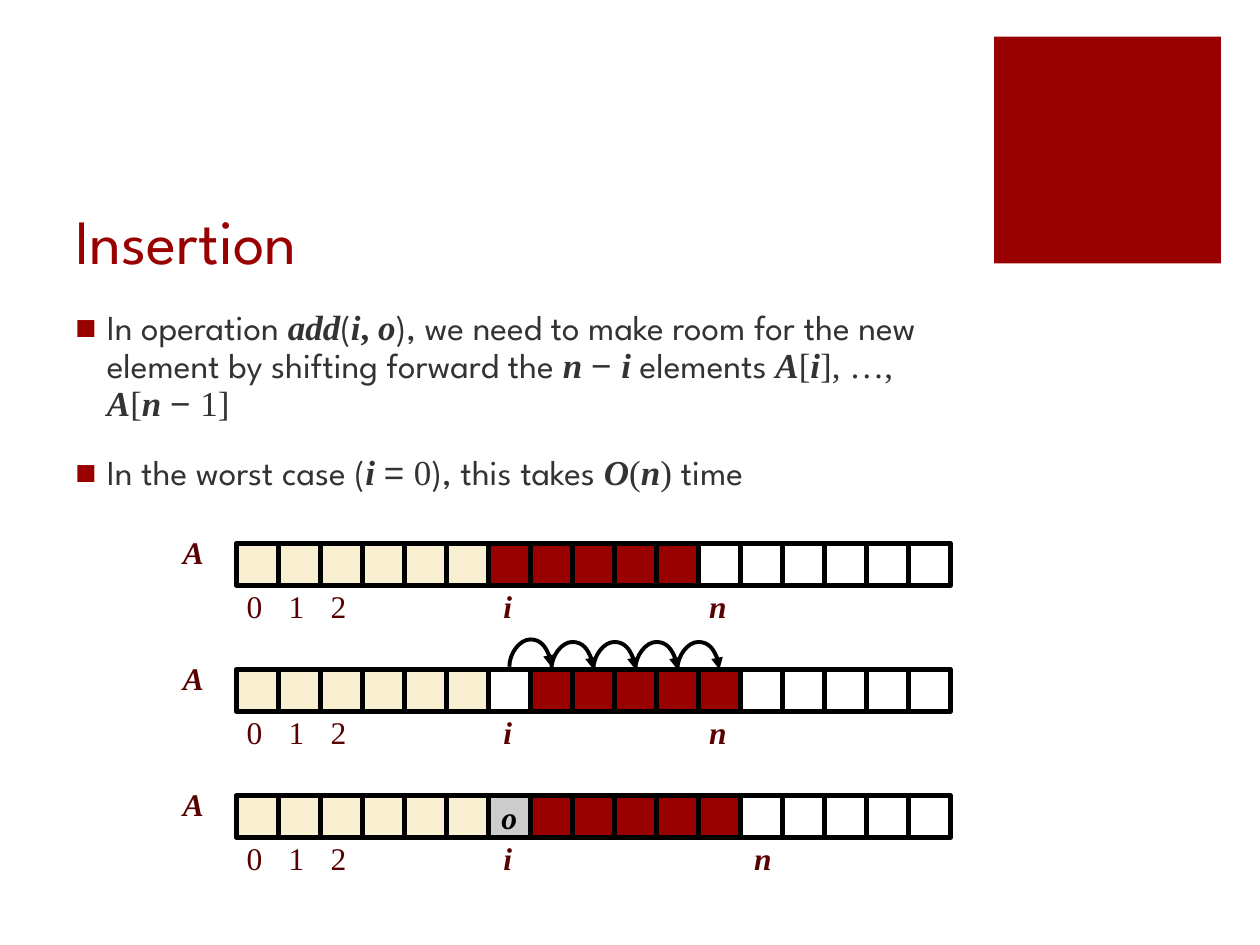
from lxml.etree import SubElement
from pptx import Presentation
from pptx.dml.color import RGBColor
from pptx.enum.shapes import MSO_CONNECTOR, MSO_SHAPE
from pptx.enum.text import MSO_ANCHOR, MSO_AUTO_SIZE, PP_ALIGN
from pptx.oxml.ns import qn
from pptx.util import Inches, Pt

WIDTH, HEIGHT = Inches(10), Inches(7.5)
COLUMN, ROW = WIDTH / 120, HEIGHT / 90
CELL = 4
RED, MAROON, GREY, BLACK = "990000", "580101", "333333", "000000"
CELL_FILLS = {"c": "F8F0D0", "r": RED, "w": "FFFFFF", "o": "CCCCCC"}

SANS, SERIF = "League Spartan", "Times New Roman"
STYLES = {
    "plain": {"name": SANS},
    "variable": {"name": SERIF, "bold": True, "italic": True},
    "strong": {"name": SERIF, "bold": True},
    "math": {"name": SERIF},
    "sign": {"name": "Arial"},
}

POINTS = [
    [("In operation ", "plain"), ("add", "variable"), ("(", "plain"),
     ("i", "variable"), (", ", "strong"), ("o", "variable"),
     ("), we need to make room for the new element by shifting forward the ", "plain"),
     ("n ", "variable"), ("− ", "sign"), ("i", "variable"),
     (" elements ", "plain"), ("A", "variable"), ("[", "math"),
     ("i", "variable"), ("], …, ", "math"), ("A", "variable"),
     ("[", "math"), ("n ", "variable"), ("− ", "sign"), ("1]", "math")],
    [("In the worst case (", "plain"), ("i ", "variable"), ("= ", "sign"),
     ("0", "math"), ("), this takes ", "plain"), ("O", "variable"),
     ("(", "math"), ("n", "variable"), (")", "math"), (" time", "plain")],
]

ARRAYS = [("ccccccrrrrrwwwwww", 44), ("ccccccwrrrrrwwwww", 44), ("ccccccorrrrrwwwww", 48.3)]


def color(value):
    return RGBColor.from_string(value)


def apply(target, values):
    for attribute, value in values.items():
        setattr(target, attribute, value)


def place(box):
    left, top, width, height = box
    return (round(left * COLUMN), round(top * ROW),
            round(width * COLUMN), round(height * ROW))


def add_run(paragraph, text, style, size, hue):
    run = paragraph.add_run()
    run.text = text
    apply(run.font, {"size": Pt(size), **STYLES[style]})
    run.font.color.rgb = color(hue)


def add_rectangle(slide, box, fill):
    rectangle = slide.shapes.add_shape(MSO_SHAPE.RECTANGLE, *place(box))
    rectangle.shadow.inherit = False
    rectangle.fill.solid()
    rectangle.fill.fore_color.rgb = color(fill)
    rectangle.line.fill.background()
    return rectangle


def add_title(slide, box):
    frame = slide.shapes.add_textbox(*place(box)).text_frame
    apply(frame, {"word_wrap": True, "vertical_anchor": MSO_ANCHOR.BOTTOM})
    add_run(frame.paragraphs[0], "Insertion", "plain", 36, RED)


def add_bullet(paragraph):
    properties = paragraph._p.get_or_add_pPr()
    properties.set("marL", str(Inches(0.25)))
    properties.set("indent", str(-Inches(0.25)))
    bullet_color = SubElement(properties, qn("a:buClr"))
    SubElement(bullet_color, qn("a:srgbClr"), val=RED)
    SubElement(properties, qn("a:buFont"), typeface="Arial")
    SubElement(properties, qn("a:buChar"), char="■")


def add_points(slide, box):
    frame = slide.shapes.add_textbox(*place(box)).text_frame
    frame.word_wrap = True
    for index, point in enumerate(POINTS):
        paragraph = frame.add_paragraph() if index else frame.paragraphs[0]
        apply(paragraph, {"line_spacing": 0.9, "space_before": Pt(18)})
        add_bullet(paragraph)
        for text, style in point:
            add_run(paragraph, text, style, 20, GREY)


def add_label(slide, box, text, style):
    frame = slide.shapes.add_textbox(*place(box)).text_frame
    is_variable = style == "variable"
    apply(frame, {"margin_left": 0, "margin_top": 0, "margin_right": 0,
                  "margin_bottom": 0, "word_wrap": is_variable,
                  "auto_size": MSO_AUTO_SIZE.SHAPE_TO_FIT_TEXT})
    paragraph = frame.paragraphs[0]
    paragraph.alignment = PP_ALIGN.CENTER if is_variable else PP_ALIGN.LEFT
    add_run(paragraph, text, style, 18, MAROON)


def add_array(slide, origin, pattern, n_offset):
    left, top = origin
    add_label(slide, (left - 6, top - 1, 3.84, 4.8), "A", "variable")
    for index in range(3):
        add_label(slide, (left + 1 + CELL * index, top + 4.2, 2.04, 4.8), str(index), "math")
    for name, offset in (("i", 6 * CELL), ("n", n_offset)):
        add_label(slide, (left + offset, top + 4.2, 3.72, 4.8), name, "variable")
    for index, kind in enumerate(pattern):
        cell = add_rectangle(slide, (left + CELL * index, top, CELL, CELL), CELL_FILLS[kind])
        cell.line.color.rgb = color(BLACK)
        cell.line.width = Pt(3)
        if kind == "o":
            apply(cell.text_frame, {"word_wrap": False, "vertical_anchor": MSO_ANCHOR.MIDDLE})
            paragraph = cell.text_frame.paragraphs[0]
            paragraph.alignment = PP_ALIGN.CENTER
            add_run(paragraph, kind, "variable", 18, BLACK)


def add_shift(slide, start, top):
    middle = round((start + CELL / 2) * COLUMN)
    level, half, thickness = round(top * ROW), round(CELL / 2 * COLUMN), Pt(0.12)
    shift = slide.shapes.add_connector(
        MSO_CONNECTOR.CURVE, middle, level + half, middle + thickness, level - half)
    shift.line.color.rgb = color(BLACK)
    shift.line.width = Pt(2.25)
    properties = shift._element.spPr
    properties.find(qn("a:xfrm")).set("rot", "5400000")
    adjustments = properties.find(qn("a:prstGeom")).get_or_add_avLst()
    bend = round(-2.75 * ROW / thickness * 100000)
    SubElement(adjustments, qn("a:gd"), name="adj1", fmla=f"val {bend}")
    SubElement(shift.line._get_or_add_ln(), qn("a:tailEnd"), type="triangle")
    SubElement(properties, qn("a:effectLst"))


def add_shifts(slide, origin):
    left, top = origin
    for index in range(6, 11):
        lift = 0.24 if index == 6 else 0
        add_shift(slide, left + CELL * (index + 0.5), top - lift)


def main():
    presentation = Presentation()
    apply(presentation, {"slide_width": WIDTH, "slide_height": HEIGHT})
    slide = presentation.slides.add_slide(presentation.slide_layouts[6])
    add_rectangle(slide, (94.68, 3.48, 21.6, 21.6), RED)
    add_title(slide, (6, 12, 85.5, 15))
    add_points(slide, (6, 29, 85.5, 51.4))
    origins = [(22.5, 51.75 + 12 * index) for index in range(len(ARRAYS))]
    for origin, (pattern, n_offset) in zip(origins, ARRAYS):
        add_array(slide, origin, pattern, n_offset)
    add_shifts(slide, origins[1])
    presentation.save("out.pptx")


if __name__ == "__main__":
    main()
